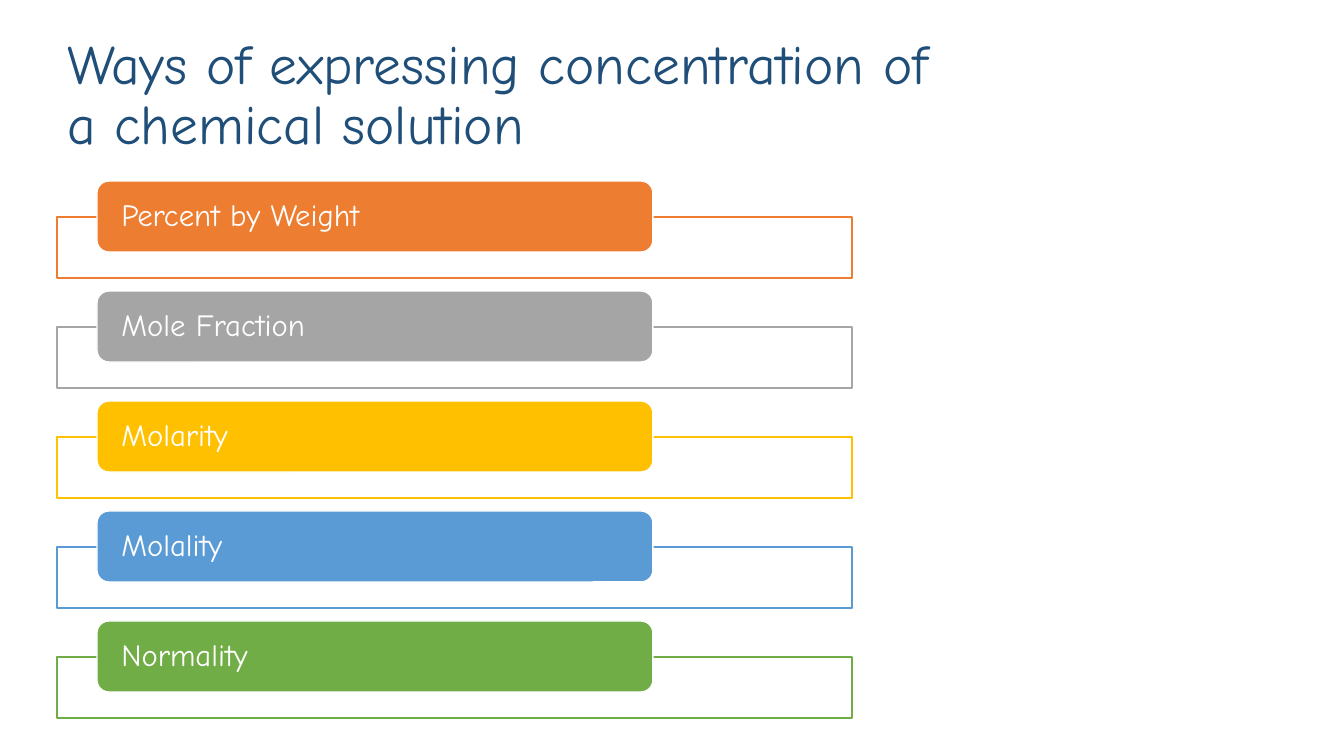
from pptx import Presentation
from pptx.dml.color import RGBColor
from pptx.enum.shapes import MSO_SHAPE as SHAPE
from pptx.enum.text import MSO_ANCHOR as ANCHOR, MSO_AUTO_SIZE as AUTO, PP_ALIGN as ALIGN
from pptx.util import Emu, Pt

FONT = "Comic Neue"
WHITE = RGBColor(0xFF, 0xFF, 0xFF)
NAVY = RGBColor(0x1F, 0x4E, 0x79)
ORANGE = RGBColor(0xED, 0x7D, 0x31)
GRAY = RGBColor(0xA5, 0xA5, 0xA5)
GOLD = RGBColor(0xFF, 0xC0, 0x00)
BLUE = RGBColor(0x5B, 0x9B, 0xD5)
GREEN = RGBColor(0x70, 0xAD, 0x47)

METHODS = [
    ("Percent by Weight", ORANGE),
    ("Mole Fraction", GRAY),
    ("Molarity", GOLD),
    ("Molality", BLUE),
    ("Normality", GREEN),
]
ROW_PITCH = 110


def px(n):
    return Emu(round(n * 914400 / 100.8))


def add_box(kind, x, y, w, h, fill, line):
    sp = slide.shapes.add_shape(kind, px(x), px(y), px(w), px(h))
    sp.shadow.inherit = False
    sp.fill.solid()
    sp.fill.fore_color.rgb = fill
    sp.line.color.rgb = line
    sp.line.width = Pt(1)
    return sp


prs = Presentation()
prs.slide_width, prs.slide_height = px(1344), px(756)
slide = prs.slides.add_slide(prs.slide_layouts[5])

title = slide.shapes.title
title.left, title.top, title.width, title.height = px(57), px(40), px(923), px(113)
tf = title.text_frame
tf.text = "Ways of expressing concentration of a chemical solution"
tf.word_wrap = True
tf.auto_size = AUTO.NONE
tf.vertical_anchor = ANCHOR.MIDDLE
p = tf.paragraphs[0]
p.alignment = ALIGN.LEFT
p.line_spacing = 0.9
p.font.name = FONT
p.font.size = Pt(39.6)
p.font.color.rgb = NAVY

for i, (name, color) in enumerate(METHODS):
    y = 181 + i * ROW_PITCH
    add_box(SHAPE.RECTANGLE, 57, y + 36, 795, 61, WHITE, color)
    label = add_box(SHAPE.ROUNDED_RECTANGLE, 97, y, 556, 71, color, WHITE)
    tf = label.text_frame
    tf.text = name
    tf.word_wrap = True
    tf.vertical_anchor = ANCHOR.MIDDLE
    tf.margin_left = tf.margin_right = px(21)
    tf.margin_top = tf.margin_bottom = 0
    p = tf.paragraphs[0]
    p.alignment = ALIGN.LEFT
    p.line_spacing = 0.9
    p.font.name = FONT
    p.font.size = Pt(22)
    p.font.color.rgb = WHITE

prs.save("out.pptx")
